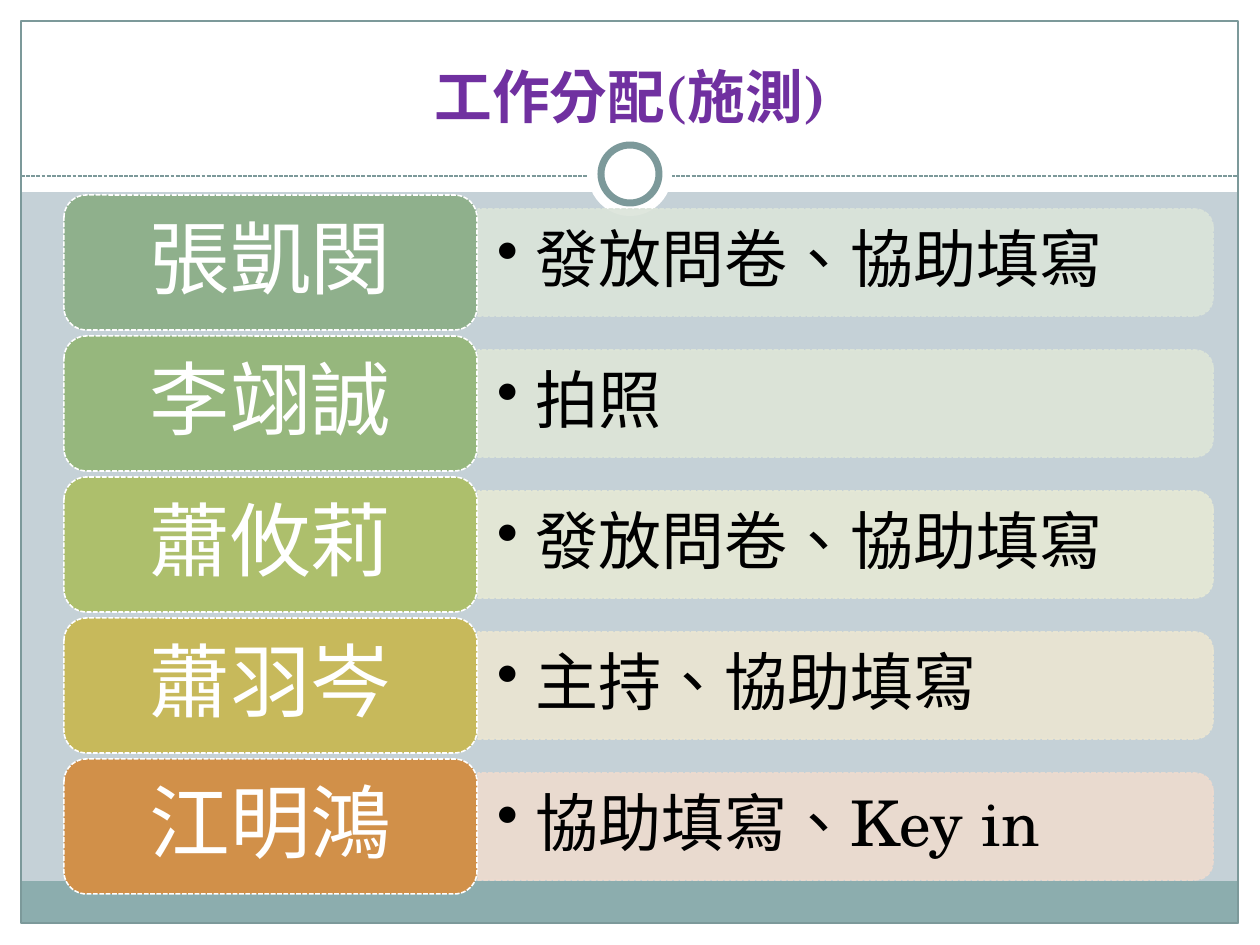
from lxml import etree
from pptx import Presentation
from pptx.dml.color import RGBColor
from pptx.enum.dml import MSO_LINE
from pptx.enum.shapes import MSO_CONNECTOR, MSO_SHAPE
from pptx.enum.text import MSO_ANCHOR, PP_ALIGN
from pptx.oxml.ns import qn
from pptx.util import Emu, Pt

RECT, OVAL = MSO_SHAPE.RECTANGLE, MSO_SHAPE.OVAL
ROUNDED, TAB = MSO_SHAPE.ROUNDED_RECTANGLE, MSO_SHAPE.ROUND_2_SAME_RECTANGLE
STRAIGHT = MSO_CONNECTOR.STRAIGHT
DASH = MSO_LINE.SQUARE_DOT
MIDDLE, BOTTOM = MSO_ANCHOR.MIDDLE, MSO_ANCHOR.BOTTOM
LEFT, CENTER = PP_ALIGN.LEFT, PP_ALIGN.CENTER

WIDTH, HEIGHT = 1260, 945
FONT = "TeX Gyre Schola"
WHITE, BLACK, PURPLE = "FFFFFF", "000000", "7030A0"
SKY, TEAL, SLATE = "C5D1D7", "8CADAE", "7C999A"

# Name, task, name colour, task colour
ROWS = [
    ("張凱閔", "發放問卷、協助填寫", "8FB08C", "DBE4DA"),
    ("李翊誠", "拍照", "96B77D", "DEE6D8"),
    ("蕭攸莉", "發放問卷、協助填寫", "ADBF6C", "E6E9D5"),
    ("蕭羽岑", "主持、協助填寫", "C7B95B", "EBE6D2"),
    ("江明鴻", "協助填寫、Key in", "D19049", "EEDBCF"),
]
ROW_TOP, ROW_PITCH = 195, 141
NAME_LEFT, NAME_WIDTH, NAME_HEIGHT = 64, 413, 135
TASK_LEFT, TASK_WIDTH, TASK_HEIGHT = 478, 735, 107


def px(length):
    return Emu(round(length * 914400 / 126))


def color(value):
    return RGBColor.from_string(value)


class Painter:
    def __init__(self, slide, font):
        self.slide = slide
        self.font = font

    def outline(self, line, value, points, dash=None):
        line.color.rgb = color(value)
        line.width = Pt(points)
        if dash:
            line.dash_style = dash

    def shape(self, kind, left, top, width, height, fill=None, line=None,
              points=0.75, dash=None):
        shape = self.slide.shapes.add_shape(
            kind, px(left), px(top), px(width), px(height))
        shape.shadow.inherit = False
        if fill:
            shape.fill.solid()
            shape.fill.fore_color.rgb = color(fill)
        else:
            shape.fill.background()
        if line:
            self.outline(shape.line, line, points, dash)
        else:
            shape.line.fill.background()
        return shape

    def rule(self, left, right, y, value):
        rule = self.slide.shapes.add_connector(
            STRAIGHT, px(left), px(y), px(right), px(y))
        self.outline(rule.line, value, 0.75, DASH)
        etree.SubElement(rule._element.spPr, qn("a:effectLst"))

    def task_bar(self, left, top, width, height, fill):
        # Turned a quarter so that the rounded corners face right
        bar = self.shape(TAB, left + (width - height) / 2,
                         top + (height - width) / 2, height, width,
                         fill, fill, 0.9, DASH)
        bar.rotation = 90
        for solid in bar._element.spPr.iter(qn("a:solidFill")):
            etree.SubElement(solid[0], qn("a:alpha"), val="90000")

    def text_box(self, left, top, width, height):
        return self.slide.shapes.add_textbox(
            px(left), px(top), px(width), px(height))

    def label(self, box, text, size, value, align=CENTER, anchor=MIDDLE,
              insets=(13, 6), spacing=1.0, bold=False, bullet_indent=0):
        frame = box.text_frame
        frame.word_wrap = True
        frame.vertical_anchor = anchor
        frame.margin_left = frame.margin_right = px(insets[0])
        frame.margin_top = frame.margin_bottom = px(insets[1])
        para = frame.paragraphs[0]
        para.alignment = align
        para.line_spacing = spacing
        if bullet_indent:
            props = para._p.get_or_add_pPr()
            props.set("marL", str(px(bullet_indent)))
            props.set("indent", str(-px(bullet_indent)))
            etree.SubElement(props, qn("a:buChar"), char="•")
        span = para.add_run()
        span.text = text
        span.font.name = self.font
        span.font.size = Pt(size)
        span.font.bold = bold
        span.font.color.rgb = color(value)
        span._r.get_or_add_rPr().set("lang", "zh-TW")


def main():
    deck = Presentation()
    deck.slide_width, deck.slide_height = px(WIDTH), px(HEIGHT)
    page = deck.slides.add_slide(deck.slide_layouts[6])
    page.background.fill.solid()
    page.background.fill.fore_color.rgb = color(SKY)
    painter = Painter(page, FONT)

    # White margins and header
    for area in [(0, 924, WIDTH, 21), (0, 0, WIDTH, 192),
                 (0, 0, 21, HEIGHT), (1239, 0, 21, HEIGHT)]:
        painter.shape(RECT, *area, fill=WHITE)

    # Footer band, frame and header rule with ring
    painter.shape(RECT, 21, 881, 1217, 43, fill=TEAL)
    painter.shape(RECT, 21, 21, 1217, 902, line=SLATE)
    painter.rule(21, 1239, 176, SLATE)
    painter.shape(OVAL, 588, 132, 84, 84, fill=WHITE)
    painter.shape(OVAL, 601, 145, 58, 58, fill=WHITE, line=SLATE, points=4)

    # Title
    title = painter.text_box(42, 32, 1176, 104)
    painter.label(title, "工作分配(施測)", 33, PURPLE, anchor=BOTTOM, bold=True)

    # One row per person
    for index, (name, task, name_fill, task_fill) in enumerate(ROWS):
        top = ROW_TOP + index * ROW_PITCH
        task_top = top + (NAME_HEIGHT - TASK_HEIGHT) / 2
        painter.task_bar(TASK_LEFT, task_top, TASK_WIDTH, TASK_HEIGHT, task_fill)
        task_box = painter.text_box(TASK_LEFT, task_top + 5,
                                    TASK_WIDTH - 5, TASK_HEIGHT - 10)
        painter.label(task_box, task, 36, BLACK, align=LEFT, insets=(19, 9),
                      spacing=0.9, bullet_indent=39)
        name_box = painter.shape(ROUNDED, NAME_LEFT, top, NAME_WIDTH, NAME_HEIGHT,
                                 name_fill, WHITE, 0.9, DASH)
        painter.label(name_box, name, 46, WHITE, insets=(30, 19), spacing=0.9)

    deck.save("out.pptx")


if __name__ == "__main__":
    main()
